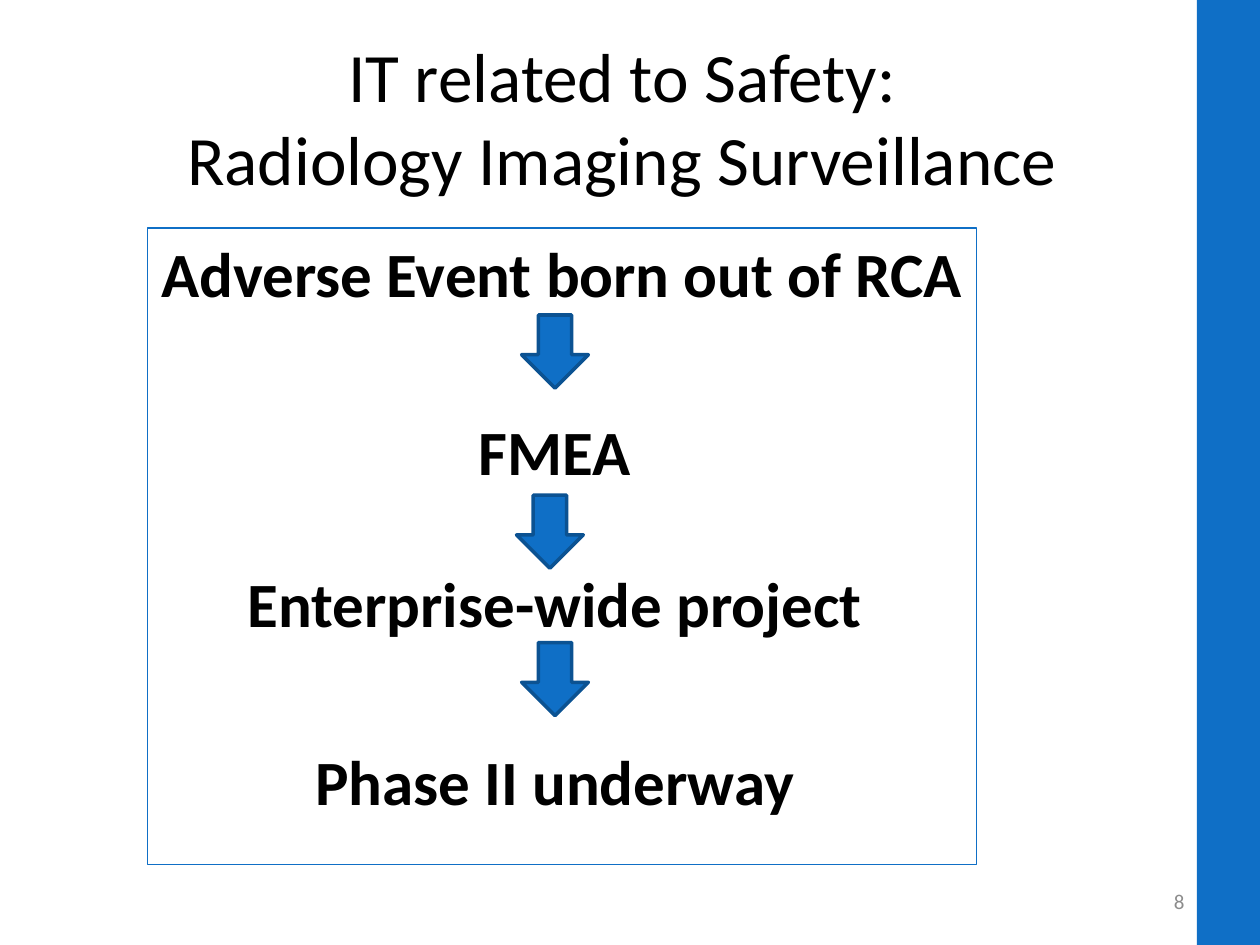
from pptx import Presentation
from pptx.dml.color import RGBColor
from pptx.enum.shapes import MSO_SHAPE as Shape
from pptx.enum.text import MSO_ANCHOR as Anchor, PP_ALIGN as Align
from pptx.util import Inches, Pt

BLUE = RGBColor(0x0F, 0x6F, 0xC6)
NAVY = RGBColor(0x0B, 0x52, 0x92)
GREY = RGBColor(0x8C, 0x8C, 0x8C)
BLACK = RGBColor(0, 0, 0)

# Each step with the space before it, in points
STEPS = [
    ("Adverse Event born out of RCA", 0),
    ("FMEA ", 58.6),
    ("Enterprise-wide project ", 43.9),
    ("Phase II underway ", 58.6),
]
ARROWS = [(4.14, 2.5), (4.1, 3.93), (4.14, 5.1)]


def add_shape(slide, kind, box, fill=None, line=None, width=0.75):
    shape = slide.shapes.add_shape(kind, *map(Inches, box))
    shape.shadow.inherit = False
    if fill is None:
        shape.fill.background()
    else:
        shape.fill.solid()
        shape.fill.fore_color.rgb = fill
    if line is None:
        shape.line.fill.background()
    else:
        shape.line.color.rgb = line
        shape.line.width = Pt(width)
    return shape


def style(para, size, color, align, bold=False):
    para.alignment = align
    font = para.font
    font.name = "Calibri"
    font.size = Pt(size)
    font.bold = bold
    font.color.rgb = color


def add_label(slide, box, text, size, color, align):
    frame = slide.shapes.add_textbox(*map(Inches, box)).text_frame
    frame.word_wrap = True
    frame.vertical_anchor = Anchor.MIDDLE
    para = frame.paragraphs[0]
    para.text = text
    style(para, size, color, align)


def add_steps(slide, box):
    frame = add_shape(slide, Shape.RECTANGLE, box, line=BLUE).text_frame
    frame.word_wrap = False
    frame.vertical_anchor = Anchor.TOP
    for i, (text, gap) in enumerate(STEPS):
        para = frame.add_paragraph() if i else frame.paragraphs[0]
        para.text = text
        para.space_before = Pt(gap)
        style(para, 36, BLACK, Align.CENTER, bold=True)


def main():
    deck = Presentation()
    deck.slide_width, deck.slide_height = Inches(10), Inches(7.5)
    slide = deck.slides.add_slide(deck.slide_layouts[6])

    add_shape(slide, Shape.RECTANGLE, (9.5, 0, 0.5, 7.5), fill=BLUE)
    add_label(slide, (0.5, 0.3, 9, 1.25),
              "IT related to Safety: \vRadiology Imaging Surveillance ",
              39.6, BLACK, Align.CENTER)
    add_label(slide, (7.17, 6.95, 2.33, 0.4), "8", 12, GREY, Align.RIGHT)
    add_steps(slide, (1.17, 1.81, 6.58, 5.05))
    for left, top in ARROWS:
        add_shape(slide, Shape.DOWN_ARROW, (left, top, 0.53, 0.58),
                  BLUE, NAVY, 2)

    deck.save("out.pptx")


if __name__ == "__main__":
    main()
